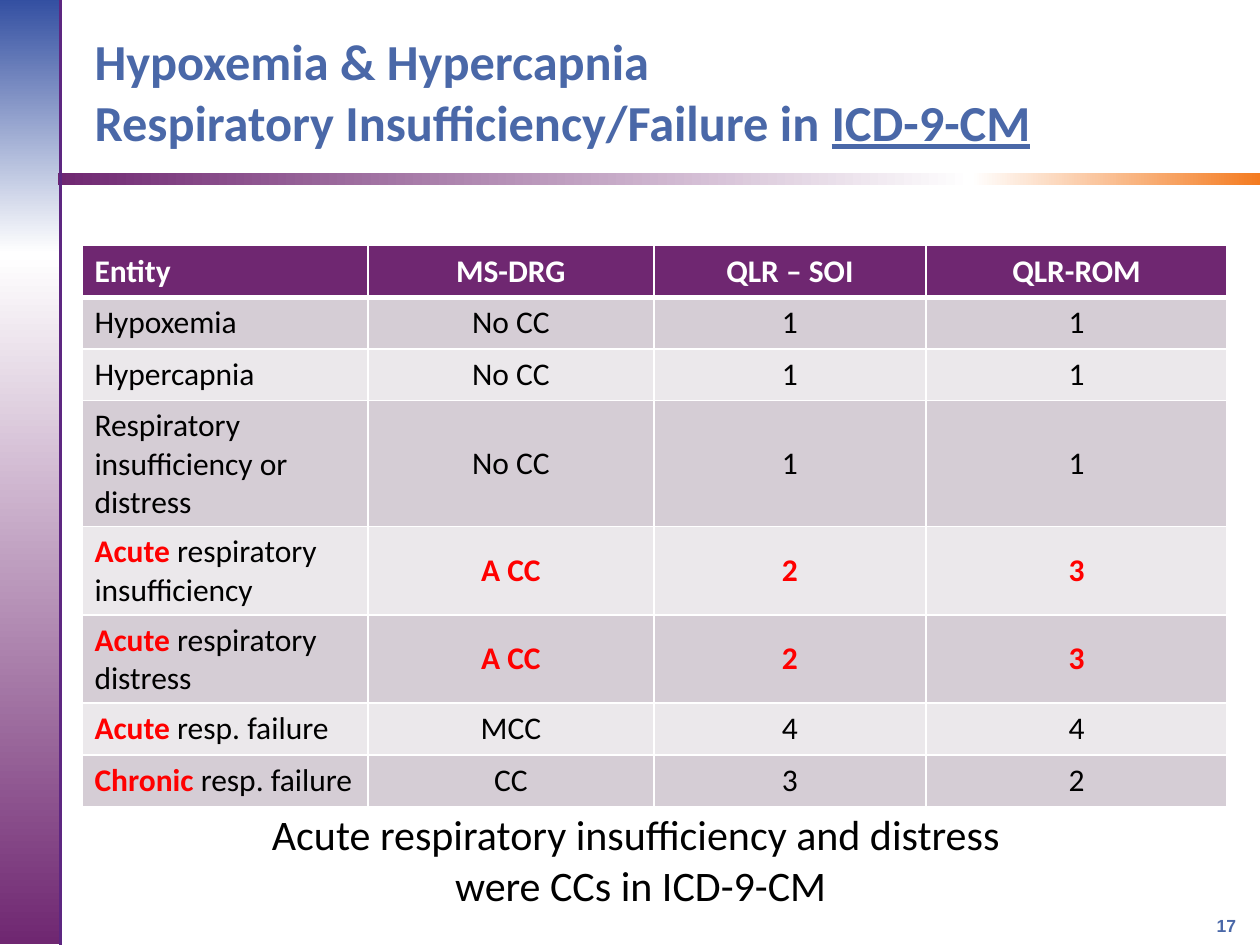
"""Build the ICD-9-CM respiratory severity slide."""
from lxml import etree
from pptx import Presentation
from pptx.dml.color import RGBColor
from pptx.enum import shapes, text
from pptx.oxml import ns
from pptx.util import Inches, Pt

COLORS = {
    "blue": "4A68A8", "deep_blue": "334FA1", "purple": "6F2771", "rule": "5D2681",
    "orange": "F47B20", "white": "FFFFFF", "black": "000000", "red": "FF0000",
    "dark_band": "D5CDD5", "light_band": "EBE8EB",
}
TITLE = ["Hypoxemia & Hypercapnia", "Respiratory Insufficiency/Failure in ", "ICD-9-CM"]
SUMMARY = ["Acute respiratory insufficiency and distress ", "were CCs in ICD-9-CM"]
PAGE = "17"
HEADINGS = ["Entity", "MS-DRG", "QLR – SOI", "QLR-ROM"]
ENTITIES = [
    ("", "Hypoxemia", ["No CC", "1", "1"], False),
    ("", "Hypercapnia", ["No CC", "1", "1"], False),
    ("", "Respiratory insufficiency or distress", ["No CC", "1", "1"], False),
    ("Acute", " respiratory insufficiency", ["A CC", "2", "3"], True),
    ("Acute", " respiratory distress", ["A CC", "2", "3"], True),
    ("Acute", " resp. failure", ["MCC", "4", "4"], False),
    ("Chronic ", "resp. failure", ["CC", "3", "2"], False),
]
COLUMN_WIDTHS = [2.27, 2.27, 2.16, 2.39]
ROW_HEIGHT = 0.41
BANDS = [
    ((-0.01, -0.01, 0.49, 7.5), 90, [(0, "deep_blue"), (27, "white"), (100, "purple")]),
    ((0.46, 1.37, 9.54, 0.1), 180, [(0, "orange"), (24, "white"), (100, "purple")]),
]


def rgb(color):
    return RGBColor.from_string(COLORS[color])


def child(parent, tag, **attributes):
    element = etree.SubElement(parent, ns.qn(tag))
    for key, value in attributes.items():
        element.set(key, str(value))
    return element


def add_run(paragraph, words, size, color, bold=False, font="Calibri"):
    run = paragraph.add_run()
    run.text = words
    run.font.name, run.font.size, run.font.bold = font, Pt(size), bold
    run.font.color.rgb = rgb(color)
    return run


def add_band(slide, box, angle, stops):
    band = slide.shapes.add_shape(shapes.MSO_SHAPE.RECTANGLE, *map(Inches, box))
    band.shadow.inherit = False
    band.line.fill.background()
    band.fill.gradient()
    gradient = band.fill._xPr.find(ns.qn("a:gradFill"))
    for part in list(gradient):
        gradient.remove(part)
    stop_list = child(gradient, "a:gsLst")
    for position, color in stops:
        stop = child(stop_list, "a:gs", pos=position * 1000)
        child(stop, "a:srgbClr", val=COLORS[color])
    child(gradient, "a:lin", ang=angle * 60000, scaled=0)


def add_rule(slide):
    rule = slide.shapes.add_connector(
        shapes.MSO_CONNECTOR.STRAIGHT, *map(Inches, (0.48, -0.01, 0.48, 7.5)))
    rule.line.color.rgb = rgb("rule")
    rule.line.width = Pt(2)
    child(rule._element.spPr, "a:effectLst")


def add_title(slide):
    title = slide.shapes.title
    title.left, title.top, title.width, title.height = map(Inches, (0.65, 0.3, 8.12, 0.84))
    frame = title.text_frame
    frame.auto_size = text.MSO_AUTO_SIZE.NONE
    frame.vertical_anchor = text.MSO_ANCHOR.MIDDLE
    heading = frame.paragraphs[0]
    heading.alignment = text.PP_ALIGN.LEFT
    first, second, code = TITLE
    add_run(heading, first, 28.8, "blue", True)
    heading.add_line_break()
    add_run(heading, second, 28.8, "blue", True)
    add_run(heading, code, 28.8, "blue", True).font.underline = True


def add_text(slide, box, lines, alignment, margin=None, **style):
    frame = slide.shapes.add_textbox(*map(Inches, box)).text_frame
    frame.word_wrap = True
    if margin is not None:
        frame.margin_left = frame.margin_right = Inches(margin)
        frame.margin_top = frame.margin_bottom = Inches(margin)
    for index, line in enumerate(lines):
        paragraph = frame.add_paragraph() if index else frame.paragraphs[0]
        paragraph.alignment = alignment
        add_run(paragraph, line, **style)


def format_cell(cell, runs, fill, centered, middle, bottom=1):
    properties = cell._tc.get_or_add_tcPr()
    for side, width in (("L", 1), ("R", 1), ("T", 1), ("B", bottom)):
        border = child(properties, f"a:ln{side}", w=Pt(width))
        child(child(border, "a:solidFill"), "a:srgbClr", val=COLORS["white"])
    cell.fill.solid()
    cell.fill.fore_color.rgb = rgb(fill)
    if middle:
        cell.vertical_anchor = text.MSO_ANCHOR.MIDDLE
    paragraph = cell.text_frame.paragraphs[0]
    paragraph.alignment = text.PP_ALIGN.CENTER if centered else text.PP_ALIGN.LEFT
    for words, color, bold in runs:
        if words:
            add_run(paragraph, words, 18, color, bold)


def add_severity_table(slide):
    count = len(ENTITIES) + 1
    table = slide.shapes.add_table(
        count, len(HEADINGS), Inches(0.65), Inches(1.95),
        Inches(sum(COLUMN_WIDTHS)), Inches(ROW_HEIGHT * count)).table
    for column, width in zip(table.columns, COLUMN_WIDTHS):
        column.width = Inches(width)
    for index, heading in enumerate(HEADINGS):
        format_cell(table.cell(0, index), [(heading, "white", True)], "purple",
                    index > 0, False, bottom=3)
    for row, (emphasis, entity, ratings, flagged) in enumerate(ENTITIES, 1):
        fill = "dark_band" if row % 2 else "light_band"
        format_cell(table.cell(row, 0),
                    [(emphasis, "red", True), (entity, "black", False)], fill, False, False)
        for index, rating in enumerate(ratings, 1):
            color = "red" if flagged else "black"
            format_cell(table.cell(row, index), [(rating, color, flagged)], fill, True, True)


def main():
    deck = Presentation()
    deck.slide_width, deck.slide_height = Inches(10), Inches(7.5)
    slide = deck.slides.add_slide(deck.slide_layouts[5])
    for band in BANDS:
        add_band(slide, *band)
    add_text(slide, (9.32, 7.26, 0.49, 0.17), [PAGE], text.PP_ALIGN.RIGHT, margin=0,
             size=10, color="blue", bold=True, font="Arial")
    add_rule(slide)
    add_title(slide)
    add_text(slide, (0.75, 6.37, 8.67, 0.91), SUMMARY, text.PP_ALIGN.CENTER,
             size=24, color="black")
    add_severity_table(slide)
    deck.save("out.pptx")


if __name__ == "__main__":
    main()
